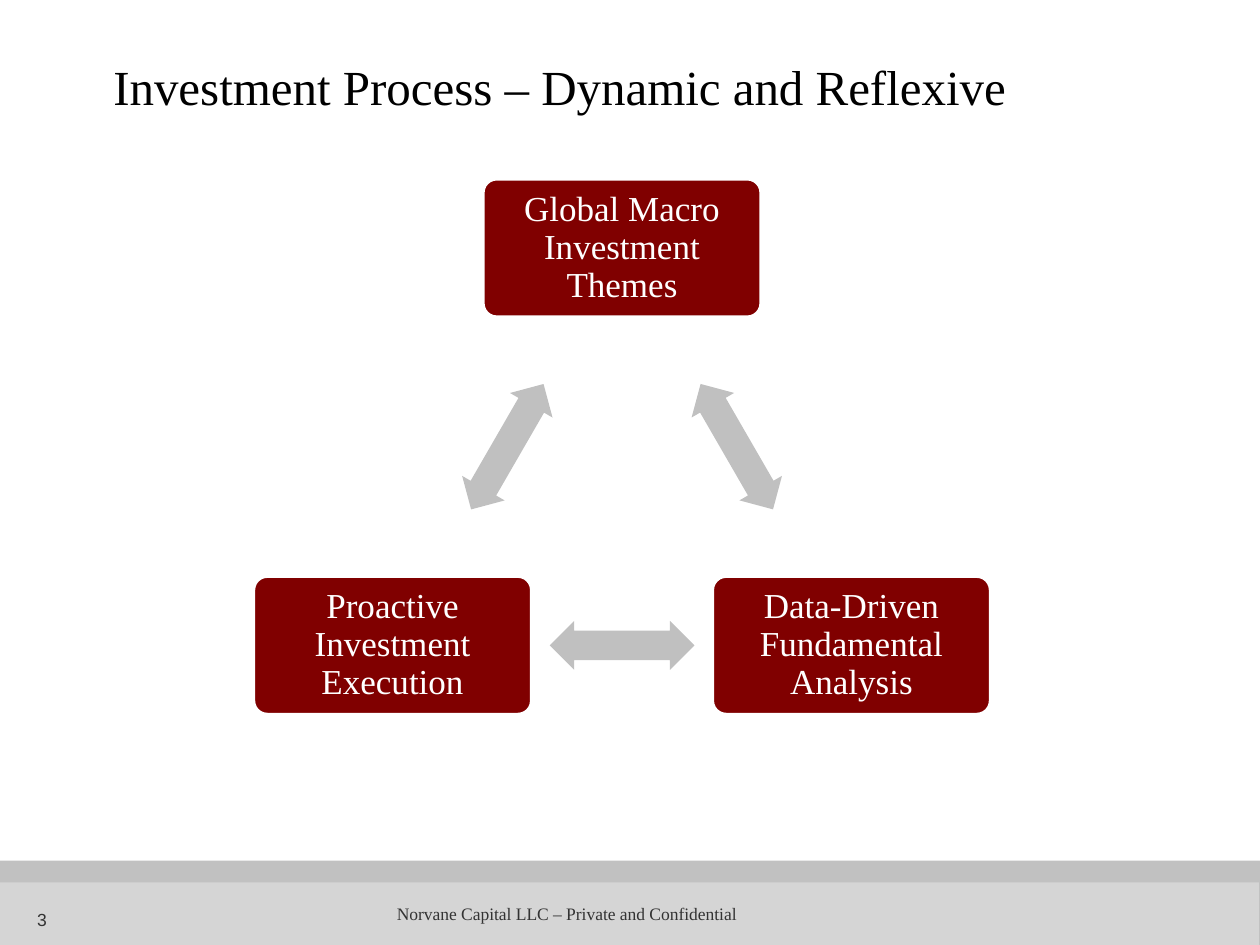
from math import cos, radians, sin

from lxml import etree
from pptx import Presentation
from pptx.dml.color import RGBColor
from pptx.enum.shapes import MSO_SHAPE
from pptx.enum.text import MSO_ANCHOR, PP_ALIGN
from pptx.oxml.ns import qn
from pptx.util import Cm, Pt

RECT = MSO_SHAPE.RECTANGLE
ROUND = MSO_SHAPE.ROUNDED_RECTANGLE
ARROW = MSO_SHAPE.LEFT_RIGHT_ARROW
TOP, MID, LOW = MSO_ANCHOR.TOP, MSO_ANCHOR.MIDDLE, MSO_ANCHOR.BOTTOM
LEFT, MIDST = PP_ALIGN.LEFT, PP_ALIGN.CENTER
SERIF, SANS = "Times New Roman", "Arial"

HUES = {
    "band": "858585", "foot": "EAEAEA", "box": "800000", "arrow": "C0C0C0",
    "white": "FFFFFF", "black": "000000", "gray": "333333",
}

# Cycle geometry in cm: steps sit on a circle, arrows halfway between them
HUB = (12.54, 10.34)
RADIUS = 5.34
BOX = (5.61, 2.79)
SPAN = (2.92, 0.99)
STEPS = [
    "Global Macro Investment Themes",
    "Data-Driven Fundamental Analysis",
    "Proactive Investment Execution",
]


def color(name):
    return RGBColor.from_string(HUES[name])


def apply(item, values):
    for key, value in values.items():
        setattr(item, key, value)


def write(shape, text, size, hue, face=SERIF, anchor=TOP, para=None, frame=None):
    body = shape.text_frame
    apply(body, {"word_wrap": True, "vertical_anchor": anchor, **(frame or {})})
    body.text = text
    line = body.paragraphs[0]
    apply(line, {"alignment": LEFT, **(para or {})})
    apply(line.font, {"size": Pt(size), "name": face})
    line.font.color.rgb = color(hue)


def label(slide, area, text, **style):
    box = slide.shapes.add_textbox(*map(Cm, area))
    write(box, text, size=10, hue="gray", **style)


def solid(slide, kind, area, hue):
    shape = slide.shapes.add_shape(kind, *map(Cm, area))
    shape.shadow.inherit = False
    shape.fill.solid()
    shape.fill.fore_color.rgb = color(hue)
    shape.line.fill.background()
    return shape


def band(slide, area, hue):
    shape = solid(slide, RECT, area, hue)
    tone = shape.fill._xPr.find(".//" + qn("a:srgbClr"))
    etree.SubElement(tone, qn("a:alpha"), val="50000")


def around(mid, size):
    return (mid[0] - size[0] / 2, mid[1] - size[1] / 2, *size)


def step(slide, mid, text):
    box = solid(slide, ROUND, around(mid, BOX), "box")
    box.adjustments[0] = 0.1
    box.line.color.rgb = color("white")
    box.line.width = Pt(2)
    sides = ("left", "right", "top", "bottom")
    write(box, text, 20, "white", anchor=MID,
          para={"alignment": MIDST, "line_spacing": 0.9},
          frame={f"margin_{side}": Cm(0.12) for side in sides})


def link(slide, mid, turn):
    arrow = solid(slide, ARROW, around(mid, SPAN), "arrow")
    arrow.adjustments[0] = 0.6
    arrow.adjustments[1] = 0.5
    arrow.rotation = turn


def cycle(slide):
    count = len(STEPS)
    spots = []
    for i in range(count):
        angle = radians(360 * i / count - 90)
        spots.append((HUB[0] + RADIUS * cos(angle),
                      HUB[1] + RADIUS * sin(angle)))
    for i, text in enumerate(STEPS):
        here, there = spots[i], spots[(i + 1) % count]
        mid = [(a + b) / 2 for a, b in zip(here, there)]
        step(slide, here, text)
        link(slide, mid, 60 + 360 * i / count)


def main():
    deck = Presentation()
    deck.slide_width, deck.slide_height = Cm(25.4), Cm(19.05)
    slide = deck.slides.add_slide(deck.slide_layouts[5])

    # Footer
    band(slide, (0, 17.35, 25.4, 1.7), "band")
    band(slide, (-0.02, 17.79, 25.4, 1.26), "foot")
    label(slide, (7.75, 18.08, 7.62, 0.69),
          "Norvane Capital LLC – Private and Confidential")
    label(slide, (0.5, 18.03, 5.92, 0.84), "3", face=SANS, anchor=LOW)

    # Title
    title = slide.shapes.title
    apply(title, {"left": Cm(2.03), "top": Cm(1.02),
                  "width": Cm(23.3), "height": Cm(2.03)})
    write(title, "Investment Process – Dynamic and Reflexive", 28, "black")

    # Process cycle
    cycle(slide)
    deck.save("out.pptx")


if __name__ == "__main__":
    main()
